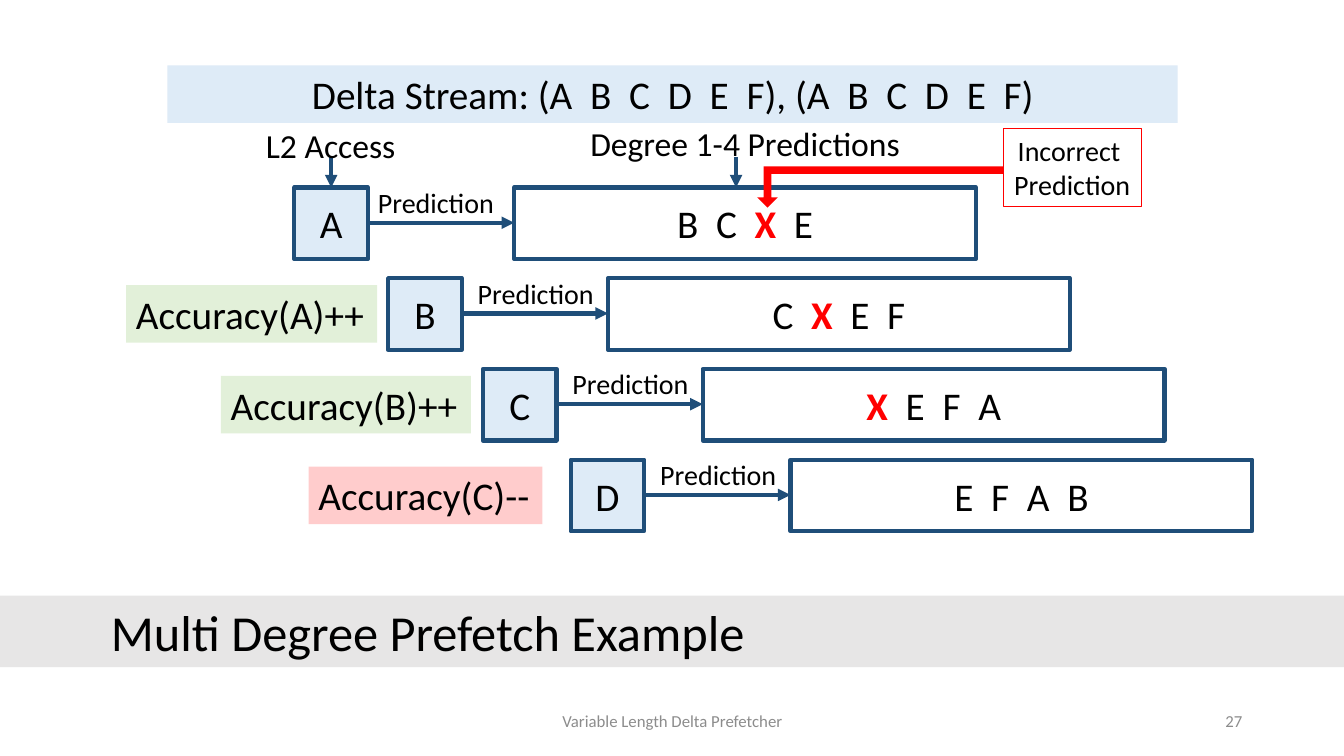
from pptx import Presentation
from pptx.dml.color import RGBColor
from pptx.enum.shapes import MSO_CONNECTOR as Line, MSO_SHAPE as Shape
from pptx.enum.text import MSO_ANCHOR as Anchor, PP_ALIGN as Align
from pptx.oxml.ns import qn
from pptx.util import Inches, Pt
from lxml.etree import SubElement

NAVY, PALE_BLUE, GREEN, PINK = "1F4E79", "DEEBF7", "E2F0D9", "FFCCCC"
RED, BLACK, WHITE, GRAY, FOOTER = "FF0000", "000000", "FFFFFF", "E7E6E6", "8C8C8C"
CELL_W, CELL_H, STREAM_W, STREAM_DX = 0.73, 0.71, 4.58, 2.18
ROW_TOP, ROW_STEP = 1.86, 0.9

# Left edge, access, predictions, accuracy text, its width and fill
ROWS = [
    (2.92, "A", "B  C  X  E", None, 0, None),
    (3.85, "B", "C  X  E  F", "Accuracy(A)++", 2.49, GREEN),
    (4.79, "C", "X  E  F  A", "Accuracy(B)++", 2.48, GREEN),
    (5.66, "D", "E  F  A  B", "Accuracy(C)--", 2.32, PINK),
]


def color(value):
    return RGBColor.from_string(value)


def apply(target, values):
    for name, value in values.items():
        setattr(target, name, value)


def add_text(box, text, size, ink=BLACK, align=Align.LEFT, anchor=Anchor.TOP, wrap=True):
    """Write the lines of text; every X is a wrong prediction, bold and red."""
    frame = box.text_frame
    apply(frame, {"word_wrap": wrap, "vertical_anchor": anchor})
    for number, line in enumerate(text.split("\n")):
        para = frame.paragraphs[0] if number == 0 else frame.add_paragraph()
        para.alignment = align
        for part in line.partition("X"):
            if part:
                span = para.add_run()
                span.text = part
                wrong = part == "X"
                apply(span.font, {"name": "Calibri", "size": Pt(size), "bold": wrong})
                span.font.color.rgb = color(RED if wrong else ink)


def add_label(page, left, top, width, height, text, size, **style):
    box = page.shapes.add_textbox(*map(Inches, (left, top, width, height)))
    add_text(box, text, size, **style)
    return box


def add_block(page, left, top, width, height, fill=None, line=None, weight=3, kind=Shape.RECTANGLE):
    box = page.shapes.add_shape(kind, *map(Inches, (left, top, width, height)))
    box.shadow.inherit = False
    if fill:
        box.fill.solid()
        box.fill.fore_color.rgb = color(fill)
    else:
        box.fill.background()
    if line:
        box.line.color.rgb = color(line)
        box.line.width = Pt(weight)
    else:
        box.line.fill.background()
    return box


def add_arrow(page, x1, y1, x2, y2):
    arrow = page.shapes.add_connector(Line.STRAIGHT, *map(Inches, (x1, y1, x2, y2)))
    arrow.line.color.rgb = color(NAVY)
    arrow.line.width = Pt(3)
    SubElement(arrow.line._get_or_add_ln(), qn("a:tailEnd"), type="triangle")
    SubElement(arrow._element.spPr, qn("a:effectLst"))


def add_row(page, left, top, access, predictions, accuracy, accuracy_w, accuracy_fill):
    # Access cell and predicted stream
    centered = {"align": Align.CENTER, "anchor": Anchor.MIDDLE}
    cell = add_block(page, left, top, CELL_W, CELL_H, PALE_BLUE, NAVY)
    add_text(cell, access, 28, **centered)
    stream = add_block(page, left + STREAM_DX, top, STREAM_W, CELL_H, WHITE, NAVY)
    add_text(stream, predictions, 28, **centered)
    # Arrow between them
    add_arrow(page, left + CELL_W, top + 0.35, left + STREAM_DX, top + 0.35)
    label_dx = 0.79 if accuracy else CELL_W
    add_label(page, left + label_dx, top - 0.07, 1.37, 0.44, "Prediction", 20, wrap=False)
    # Accuracy update
    if accuracy:
        badge = add_block(page, left - 2.6, top + 0.07, accuracy_w, 0.57, accuracy_fill)
        add_text(badge, accuracy, 28, wrap=False)


def add_callouts(page, left, top):
    """Labels over the first row, whose top left corner is given."""
    stream = left + STREAM_DX
    # Column labels with arrows down to the row
    degree = add_block(page, stream, top - 0.8, STREAM_W, CELL_H, WHITE)
    add_text(degree, "Degree 1-4 Predictions", 24, align=Align.CENTER, anchor=Anchor.MIDDLE)
    for x in (left + CELL_W / 2, stream + 2.2):
        add_arrow(page, x, top - 0.3, x, top)
    add_label(page, left - 0.39, top - 0.67, 1.5, 0.5, "L2 Access", 24,
              align=Align.CENTER, wrap=False)
    # Incorrect prediction note and its bent arrow
    bent = add_block(page, stream + 2.41, top - 0.21, 2.44, 0.41, RED, kind=Shape.BENT_UP_ARROW)
    bent.rotation = 180
    for index, value in enumerate((0.185, 0.25, 0.25)):
        bent.adjustments[index] = value
    note = add_block(page, stream + 4.85, top - 0.58, 1.37, 0.77, line=RED, weight=0.75)
    add_text(note, "Incorrect \nPrediction", 20, align=Align.CENTER, wrap=False)


def add_bands(page):
    stream = add_block(page, 1.66, 0.65, 10.02, 0.57, PALE_BLUE)
    add_text(stream, "Delta Stream: (A  B  C  D  E  F), (A  B  C  D  E  F)", 28, align=Align.CENTER)
    title = add_block(page, 0, 5.91, 13.33, 0.71, GRAY)
    add_text(title, "Multi Degree Prefetch Example", 36)
    title.text_frame.margin_left = Inches(1.1)


def add_footer(page, top):
    for left, width, text, align in (
        (4.42, 4.5, "Variable Length Delta Prefetcher", Align.CENTER),
        (9.42, 3, "27", Align.RIGHT),
    ):
        add_label(page, left, top, width, 0.4, text, 12, ink=FOOTER,
                  align=align, anchor=Anchor.MIDDLE)


def main():
    deck = Presentation()
    apply(deck, {"slide_width": Inches(13.33), "slide_height": Inches(7.5)})
    page = deck.slides.add_slide(deck.slide_layouts[6])
    add_footer(page, 6.95)
    for index, (left, *parts) in enumerate(ROWS):
        add_row(page, left, ROW_TOP + index * ROW_STEP, *parts)
    add_callouts(page, ROWS[0][0], ROW_TOP)
    add_bands(page)
    deck.save("out.pptx")


if __name__ == "__main__":
    main()
